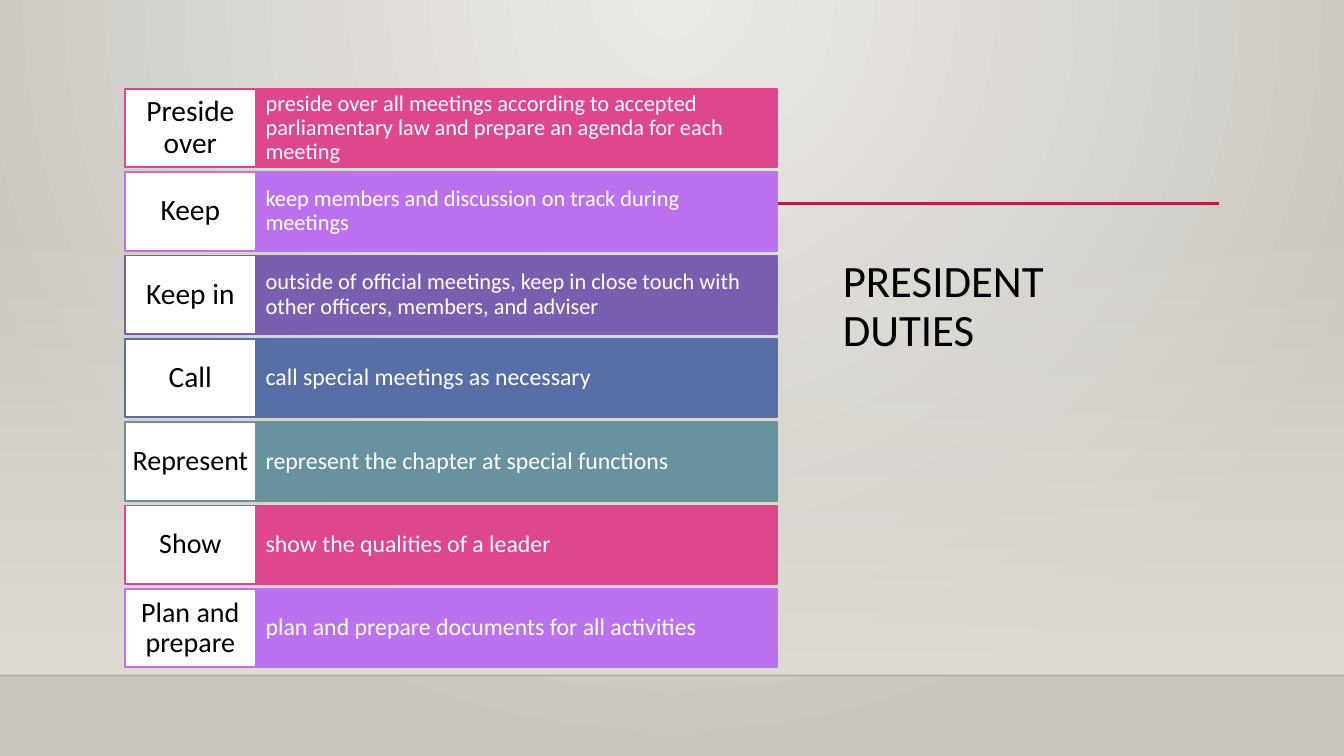
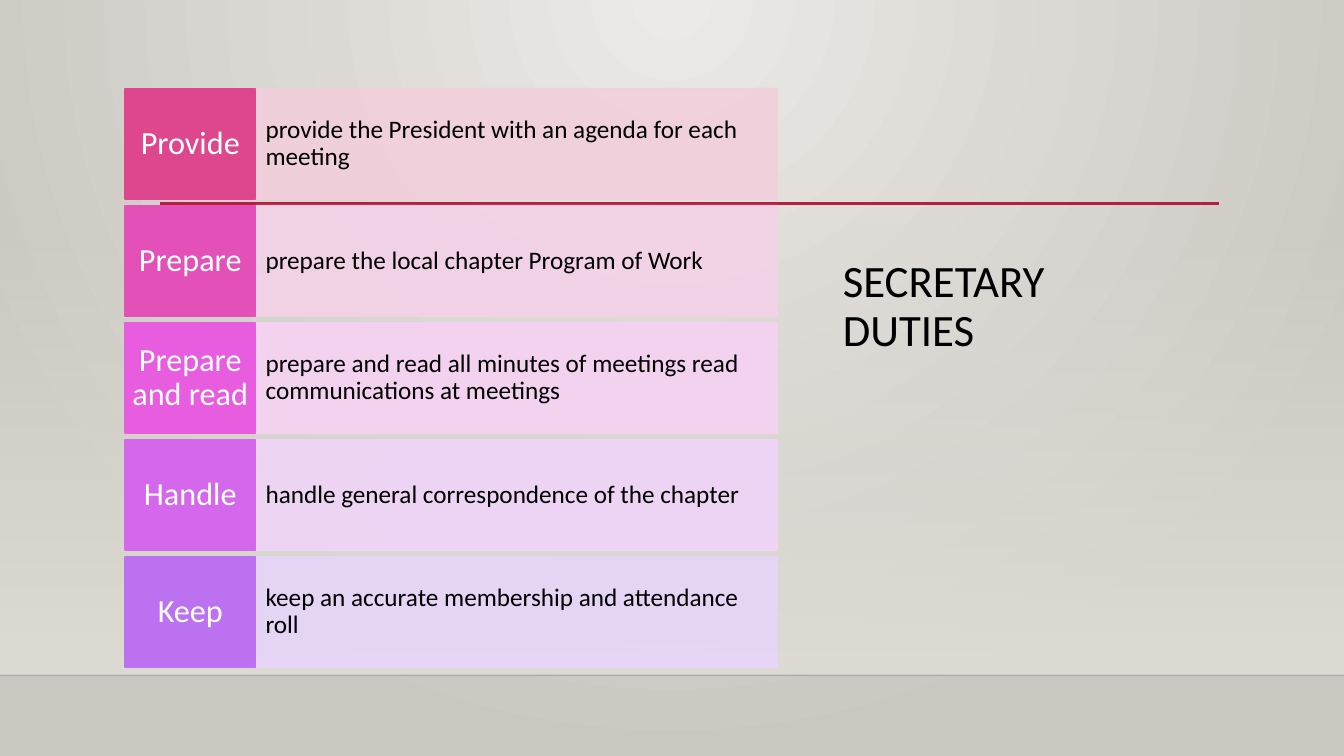
"""Build two slides that list the duties of club officers."""
from lxml import etree
from pptx import Presentation
from pptx.dml.color import RGBColor
from pptx.enum.shapes import MSO_CONNECTOR, MSO_SHAPE
from pptx.enum.text import MSO_ANCHOR, PP_ALIGN
from pptx.oxml.ns import qn
from pptx.util import Pt

RECT = MSO_SHAPE.RECTANGLE
LINE = MSO_CONNECTOR.STRAIGHT
TOP, MIDDLE = MSO_ANCHOR.TOP, MSO_ANCHOR.MIDDLE
LEFT, CENTER = PP_ALIGN.LEFT, PP_ALIGN.CENTER

WIDTH, HEIGHT = 960, 540
FONT = "Calibri"
BLACK, WHITE = "000000", "FFFFFF"
GLOW, EDGE, SAND, RED = "ECEAE7", "CAC7C1", "DFDBD5", "B71E42"
PINK, VIOLET, PURPLE = "DE478E", "BC72F0", "795FAF"
BLUE, TEAL = "586EA6", "6892A0"

FLOOR = 482.4
LIST_X, LIST_Y, LIST_H = 89.4, 63.4, 413.3
KEY_W, DUTY_W = 93.2, 372.5
GAP = 0.06

PRESIDENT = [
    ("Preside over", 21, "preside over all meetings according to accepted "
     "parliamentary law and prepare an agenda for each meeting", 16, PINK),
    ("Keep", 21, "keep members and discussion on track during meetings",
     16, VIOLET),
    ("Keep in", 21, "outside of official meetings, keep in close touch with "
     "other officers, members, and adviser", 16, PURPLE),
    ("Call", 21, "call special meetings as necessary", 17, BLUE),
    ("Represent", 20, "represent the chapter at special functions", 17, TEAL),
    ("Show", 20, "show the qualities of a leader", 17, PINK),
    ("Plan and prepare", 20, "plan and prepare documents for all activities",
     17, VIOLET),
]
SECRETARY = [
    ("Provide", "provide the President with an agenda for each meeting",
     PINK, "F2CFDB"),
    ("Prepare", "prepare the local chapter Program of Work",
     "E351B8", "F4D1E7"),
    ("Prepare and read", "prepare and read all minutes of meetings read "
     "communications at meetings", "E85CE0", "F6D2F3"),
    ("Handle", "handle general correspondence of the chapter",
     "D467EC", "F0D4F8"),
    ("Keep", "keep an accurate membership and attendance roll",
     VIOLET, "E7D5F9"),
]


def paint(color):
    """Turn a hex string into a colour."""
    return RGBColor.from_string(color)


def fade(nodes, share):
    """Give colour nodes an opacity in percent."""
    for node in nodes:
        etree.SubElement(node, qn("a:alpha"), val=str(share * 1000))


def blend(fill, colors):
    """Fill with a two-stop gradient."""
    fill.gradient()
    for stop, color in zip(fill.gradient_stops, colors):
        stop.color.rgb = paint(color)


def set_back(master):
    """Put the round glow on the master background."""
    blend(master.background.fill, (GLOW, EDGE))
    grad = master.element.xpath(".//p:bg//a:gradFill")[0]
    grad.remove(grad.find(qn("a:lin")))
    glow = etree.SubElement(grad, qn("a:path"), path="circle")
    etree.SubElement(glow, qn("a:fillToRect"),
                     l="43000", t="0", r="43000", b="100000")


def write(shape, text, size, color, align=LEFT, anchor=MIDDLE, pad=(7.2, 3.6)):
    """Set and format the text of a shape."""
    frame = shape.text_frame
    frame.word_wrap = True
    frame.vertical_anchor = anchor
    frame.margin_left = frame.margin_right = Pt(pad[0])
    frame.margin_top = frame.margin_bottom = Pt(pad[1])
    frame.text = text
    para = frame.paragraphs[0]
    para.alignment = align
    para.line_spacing = 0.9
    font = para.runs[0].font
    font.name, font.size = FONT, Pt(size)
    font.color.rgb = paint(color)


def add_rect(slide, x, y, w, h):
    """Add a plain rectangle without shadow."""
    shape = slide.shapes.add_shape(RECT, Pt(x), Pt(y), Pt(w), Pt(h))
    shape.shadow.inherit = False
    return shape


def add_bar(slide, box, fill, line, share=100):
    """Add a filled and outlined bar."""
    bar = add_rect(slide, *box)
    bar.fill.solid()
    bar.fill.fore_color.rgb = paint(fill)
    bar.line.color.rgb = paint(line)
    bar.line.width = Pt(1.25)
    if share < 100:
        fade(bar.element.xpath("p:spPr//a:srgbClr"), share)
    return bar


def add_rule(slide, x1, x2, y, color, width, share=100):
    """Add a level line."""
    rule = slide.shapes.add_connector(LINE, Pt(x1), Pt(y), Pt(x2), Pt(y))
    rule.line.color.rgb = paint(color)
    rule.line.width = Pt(width)
    if share < 100:
        fade(rule.element.xpath("p:spPr//a:srgbClr"), share)
    etree.SubElement(rule.element.xpath("p:spPr")[0], qn("a:effectLst"))


def add_page(deck, title):
    """Add a slide with the shared decor and its title."""
    slide = deck.slides.add_slide(deck.slide_layouts[6])
    wall = add_rect(slide, 0, 159, WIDTH, FLOOR - 159)
    blend(wall.fill, (SAND, SAND))
    wall.fill.gradient_angle = 270
    fade(wall.element.xpath("p:spPr//a:srgbClr")[:1], 0)
    wall.line.fill.background()
    add_rule(slide, 0, WIDTH, FLOOR, "000001", 1, 20)
    add_rule(slide, 114.3, 871, 145.4, RED, 2.5)
    box = slide.shapes.add_textbox(Pt(594.9), Pt(181.4), Pt(248.4), Pt(295))
    write(box, title, 32, BLACK, anchor=TOP)
    return slide


def add_list(slide, rows, share=100):
    """Stack rows of a duty bar and a key bar."""
    count = len(rows)
    high = LIST_H / (count + GAP * (count - 1))
    for i, (key, duty) in enumerate(rows):
        y = LIST_Y + i * high * (1 + GAP)
        text, size, ink, fill, line = duty
        box = (LIST_X + KEY_W, y, DUTY_W, high)
        bar = add_bar(slide, box, fill, line, share)
        write(bar, text, size, ink, pad=(7.2, high / 4))
        text, size, ink, fill, line = key
        bar = add_bar(slide, (LIST_X, y, KEY_W, high), fill, line)
        write(bar, text, size, ink, CENTER, pad=(4.9, high / 10))


def main():
    """Build and save the deck."""
    deck = Presentation()
    deck.slide_width, deck.slide_height = Pt(WIDTH), Pt(HEIGHT)
    set_back(deck.slide_master)
    add_list(add_page(deck, "PRESIDENT DUTIES"), [
        ((key, big, BLACK, WHITE, hue), (duty, small, WHITE, hue, hue))
        for key, big, duty, small, hue in PRESIDENT])
    add_list(add_page(deck, "SECRETARY DUTIES"), [
        ((key, 23, WHITE, hue, hue), (duty, 18, BLACK, pale, pale))
        for key, duty, hue, pale in SECRETARY], 90)
    deck.save("out.pptx")


if __name__ == "__main__":
    main()
